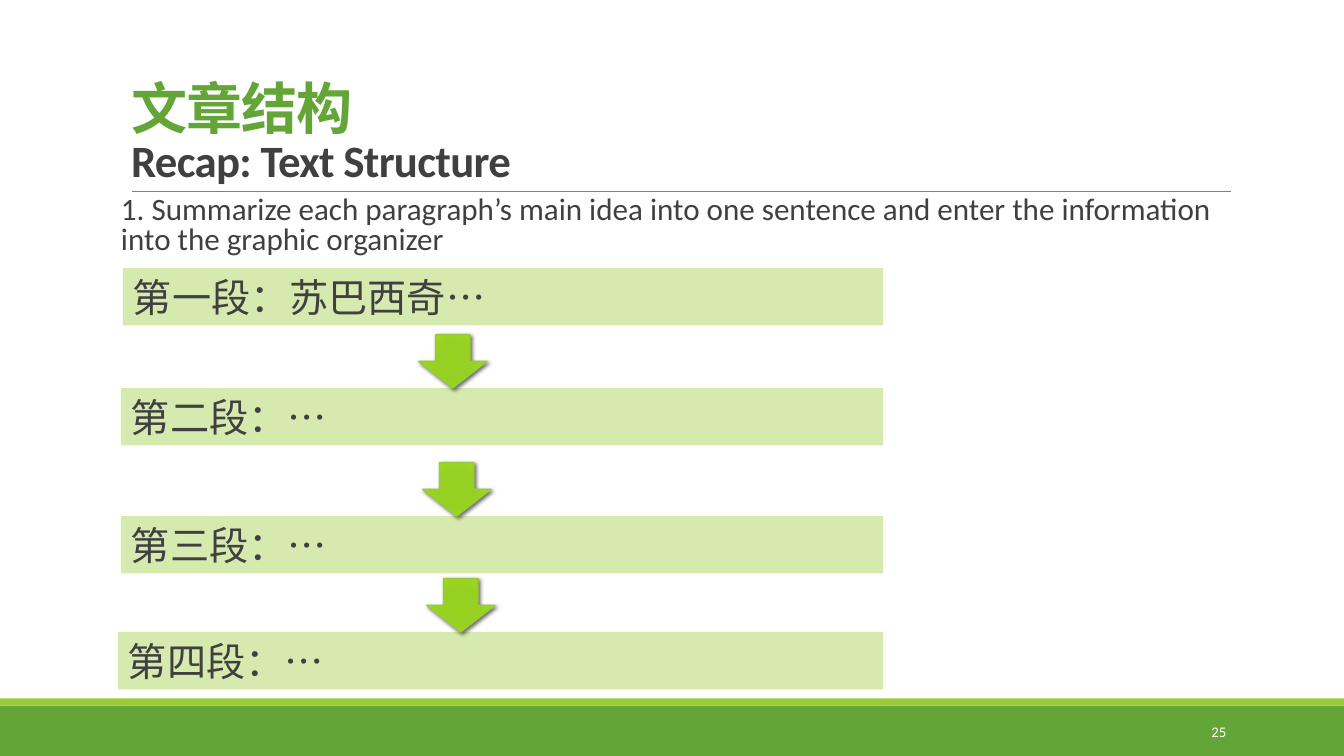
from lxml.etree import SubElement
from pptx import Presentation
from pptx.dml.color import RGBColor
from pptx.enum.shapes import MSO_CONNECTOR, MSO_SHAPE
from pptx.enum.text import MSO_ANCHOR, MSO_AUTO_SIZE, PP_ALIGN
from pptx.oxml import parse_xml
from pptx.oxml.ns import nsdecls, qn
from pptx.util import Inches, Pt

COLORS = {"green": "63A537", "lime": "99CB38", "pale": "D6EAAF",
          "text": "404040", "rule": "808080", "white": "FFFFFF",
          "shadow": "000000"}
ARROW_STOPS = [(0, "95D220"), (34, "96D023"), (70, "99D720"), (100, "9BD231")]

# Left edge, top and wording of each paragraph bar
BARS = [(1.22, 2.66, "第一段：苏巴西奇…"), (1.2, 3.85, "第二段：…"),
        (1.2, 5.12, "第三段：…"), (1.17, 6.27, "第四段：…")]
BAR_RIGHT, BAR_HEIGHT = 8.76, 0.57
ARROW_LEFTS = [4.15, 4.19, 4.23]
ARROW_WIDTH, ARROW_HEIGHT = 0.68, 0.53


def rgb(name):
    return RGBColor.from_string(COLORS[name])


def place(sp, left, top, width, height):
    sp.left, sp.top = Inches(left), Inches(top)
    sp.width, sp.height = Inches(width), Inches(height)


def add_run(p, text, size, color, font="Calibri", bold=None):
    r = p.add_run()
    r.text = text
    r.font.size, r.font.name, r.font.bold = Pt(size), font, bold
    r.font.color.rgb = rgb(color)
    return r


def set_east_asian_font(r, font):
    SubElement(r._r.get_or_add_rPr(), qn("a:ea")).set("typeface", font)


def add_box(s, shape, left, top, width, height, fill):
    sp = s.shapes.add_shape(shape, Inches(left), Inches(top),
                            Inches(width), Inches(height))
    sp.shadow.inherit = False
    sp.fill.solid()
    sp.fill.fore_color.rgb = rgb(fill)
    sp.line.fill.background()
    return sp


def add_footer(s, left, top, width, height):
    strip = 0.07
    add_box(s, MSO_SHAPE.RECTANGLE, left, top + strip, width, height - strip, "green")
    add_box(s, MSO_SHAPE.RECTANGLE, left, top, width, strip, "lime")
    number = s.shapes.add_textbox(Inches(left + 10.83), Inches(top + 0.13),
                                  Inches(1.43), Inches(0.4))
    tf = number.text_frame
    tf.word_wrap = True
    tf.vertical_anchor = MSO_ANCHOR.MIDDLE
    p = tf.paragraphs[0]
    p.alignment = PP_ALIGN.RIGHT
    add_run(p, "25", 10.5, "white")


def add_title(s, left, top, width, height):
    title = s.shapes.title
    place(title, left, top, width, height)
    tf = title.text_frame
    tf.auto_size = MSO_AUTO_SIZE.NONE
    tf.vertical_anchor = MSO_ANCHOR.BOTTOM
    p = tf.paragraphs[0]
    p.alignment, p.line_spacing = PP_ALIGN.LEFT, 0.85
    chinese = add_run(p, "文章结构", 40, "green", "Noto Sans CJK SC", True)
    set_east_asian_font(chinese, "Noto Sans CJK SC")
    p.add_line_break()
    english = add_run(p, "Recap: Text Structure", 32, "text", bold=True)
    for r in (chinese, english):
        r._r.get_or_add_rPr().set("spc", "-50")

    bottom = Inches(top + height)
    rule = s.shapes.add_connector(MSO_CONNECTOR.STRAIGHT, Inches(left + 0.11), bottom,
                                  Inches(left + width + 0.01), bottom)
    rule.line.color.rgb, rule.line.width = rgb("rule"), Pt(0.5)
    SubElement(rule._element.spPr, qn("a:effectLst"))


def add_instruction(s, left, top, width, height):
    body = s.placeholders[1]
    place(body, left, top, width, height)
    tf = body.text_frame
    tf.auto_size = MSO_AUTO_SIZE.NONE
    tf.margin_left = tf.margin_right = 0
    p = tf.paragraphs[0]
    p.line_spacing, p.space_before, p.space_after = 0.8, Pt(12), Pt(2)
    pPr = p._p.get_or_add_pPr()
    pPr.set("marL", "0")
    pPr.set("indent", "0")
    SubElement(pPr, qn("a:buNone"))
    add_run(p, "1. Summarize each paragraph’s main idea into one sentence "
               "and enter the information into the graphic organizer", 22.2, "text")


def add_bar(s, left, top, width, height, text):
    sp = add_box(s, MSO_SHAPE.RECTANGLE, left, top, width, height, "pale")
    tf = sp.text_frame
    tf.word_wrap = True
    tf.auto_size = MSO_AUTO_SIZE.SHAPE_TO_FIT_TEXT
    tf.vertical_anchor = MSO_ANCHOR.TOP
    p = tf.paragraphs[0]
    p.alignment = PP_ALIGN.LEFT
    add_run(p, text, 28, "text", "Lato")


def add_arrow(s, left, top, width, height):
    """Add a down arrow with a radial gradient and a soft shadow."""
    sp = add_box(s, MSO_SHAPE.DOWN_ARROW, left, top, width, height, "lime")
    sp.line.color.rgb, sp.line.width = rgb("lime"), Pt(1)
    spPr = sp._element.spPr
    stops = "".join(f'<a:gs pos="{pos * 1000}"><a:srgbClr val="{color}"/></a:gs>'
                    for pos, color in ARROW_STOPS)
    gradient = parse_xml(
        f'<a:gradFill {nsdecls("a")} rotWithShape="1"><a:gsLst>{stops}</a:gsLst>'
        '<a:path path="circle"><a:fillToRect l="100000" t="100000" r="100000" '
        'b="100000"/></a:path></a:gradFill>')
    spPr.replace(spPr.find(qn("a:solidFill")), gradient)
    spPr.find(qn("a:effectLst")).append(parse_xml(
        f'<a:outerShdw {nsdecls("a")} blurRad="{Pt(3)}" dist="{Pt(2)}" dir="2700000" '
        f'rotWithShape="0"><a:srgbClr val="{COLORS["shadow"]}">'
        '<a:alpha val="60000"/></a:srgbClr></a:outerShdw>'))


def add_organizer(s):
    """Stack the paragraph bars, with an arrow resting on each later bar."""
    for left, top, text in BARS:
        add_bar(s, left, top, BAR_RIGHT - left, BAR_HEIGHT, text)
    for left, (_, bar_top, _) in zip(ARROW_LEFTS, BARS[1:]):
        add_arrow(s, left, bar_top - ARROW_HEIGHT, ARROW_WIDTH, ARROW_HEIGHT)


def main():
    prs = Presentation()
    prs.slide_width, prs.slide_height = Inches(13.33), Inches(7.5)
    s = prs.slides.add_slide(prs.slide_layouts[1])
    add_footer(s, 0, 6.93, 13.33, 0.57)
    add_title(s, 1.2, 0.31, 11, 1.59)
    add_instruction(s, 1.2, 1.9, 11, 0.74)
    add_organizer(s)
    prs.save("out.pptx")


if __name__ == "__main__":
    main()
